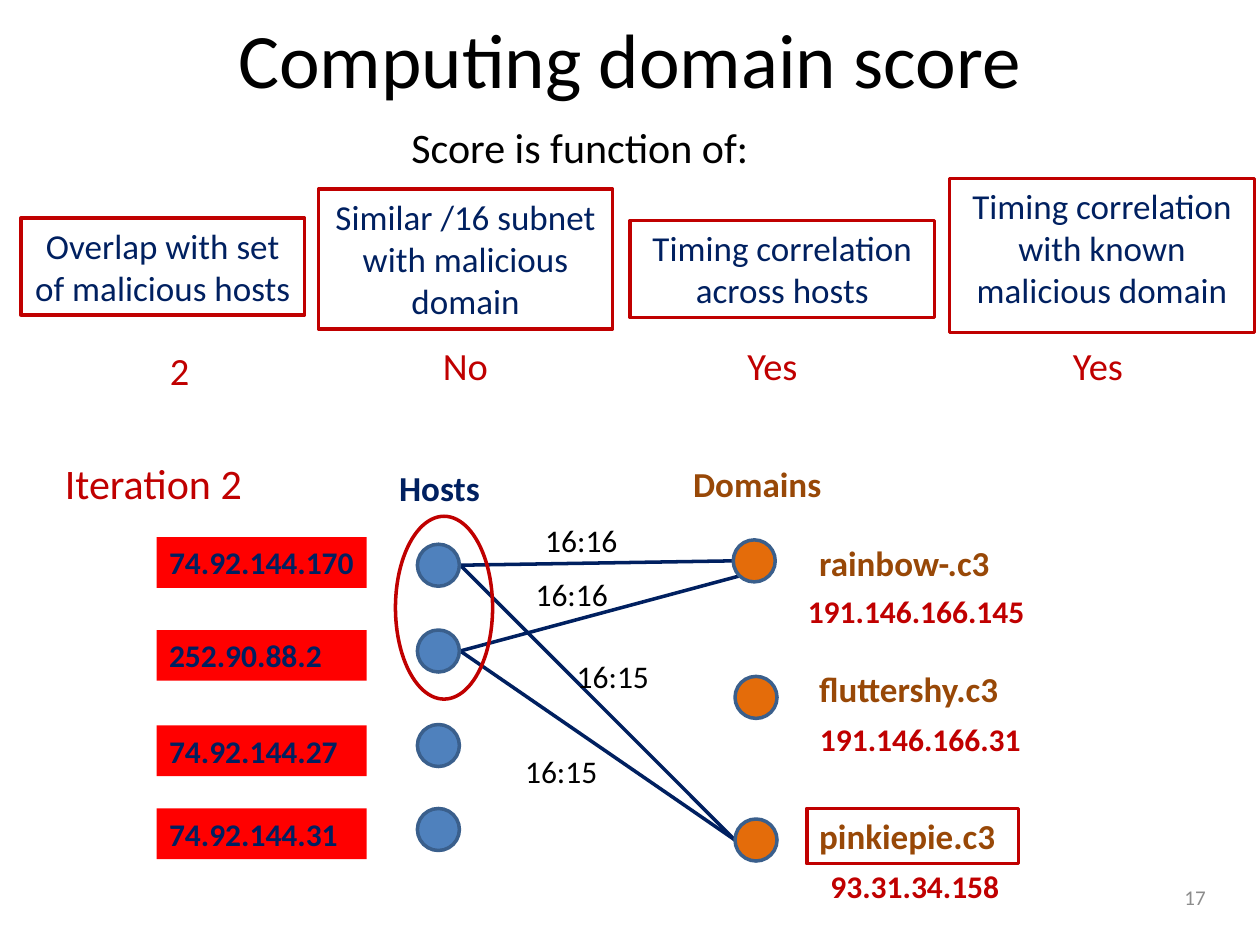
from lxml import etree
from pptx import Presentation
from pptx.dml.color import RGBColor
from pptx.enum.shapes import MSO_CONNECTOR, MSO_SHAPE
from pptx.enum.text import MSO_ANCHOR, PP_ALIGN
from pptx.oxml.ns import qn
from pptx.util import Pt

LEFT, CENTER, RIGHT = PP_ALIGN.LEFT, PP_ALIGN.CENTER, PP_ALIGN.RIGHT
MIDDLE = MSO_ANCHOR.MIDDLE
OVAL = MSO_SHAPE.OVAL
STRAIGHT = MSO_CONNECTOR.STRAIGHT

BLACK, NAVY, RED, BROWN = "000000", "002060", "C00000", "984807"
DOT = 24


def color(value):
    return RGBColor.from_string(value)


def add_text(text, left, top, width, height, size, font_color, bold=False,
             align=LEFT, wrap=True, fill=None, line=None):
    shape = slide.shapes.add_textbox(Pt(left), Pt(top), Pt(width), Pt(height))
    if fill:
        shape.fill.solid()
        shape.fill.fore_color.rgb = color(fill)
    if line:
        shape.line.color.rgb = color(line)
        shape.line.width = Pt(2)
    shape.text_frame.word_wrap = wrap
    paragraph = shape.text_frame.paragraphs[0]
    paragraph.text = text
    paragraph.alignment = align
    paragraph.font.name = "Calibri"
    paragraph.font.size = Pt(size)
    paragraph.font.bold = bold
    paragraph.font.color.rgb = color(font_color)
    return shape


presentation = Presentation()
presentation.slide_width, presentation.slide_height = Pt(720), Pt(540)
slide = presentation.slides.add_slide(presentation.slide_layouts[5])

# Title and subtitle
title = slide.shapes.title
title.left, title.top, title.width, title.height = Pt(36), Pt(-12), Pt(648), Pt(90)
title.text_frame.text = "Computing domain score"
title.text_frame.vertical_anchor = MIDDLE
paragraph = title.text_frame.paragraphs[0]
paragraph.alignment = CENTER
paragraph.font.name = "Calibri"
paragraph.font.size = Pt(44)
paragraph.font.color.rgb = color(BLACK)
add_text("Score is function of:", 228, 66, 258, 36, 24, BLACK)

# Score criteria, each with its value below
criteria = [
    ("Overlap with set of malicious hosts", 12, 124.5, 162, 55.5, "2", 90, 194.5),
    ("Similar /16 subnet with malicious domain", 182, 108, 168, 80, "No", 246, 192),
    ("Timing correlation across hosts", 360, 126, 174, 55.5, "Yes", 420, 192),
    ("Timing correlation with known malicious domain", 542.5, 102, 174.5, 88,
     "Yes", 606, 192),
]
for text, left, top, width, height, value, value_left, value_top in criteria:
    add_text(text, left, top, width, height, 20, NAVY, align=CENTER, line=RED)
    add_text(value, value_left, value_top, 54, 34, 22, RED)

# Headings of the graph
add_text("Iteration 2", 30, 258, 126, 36, 24, RED)
add_text("Hosts", 221, 263, 96, 31.5, 20, NAVY, bold=True)
add_text("Domains", 389, 261, 96, 31.5, 20, BROWN, bold=True)

# Links between hosts and domains, with their times
links = [
    (263, 323, 419, 320.5, "16:16", 304.5, 294),
    (263, 372, 423, 329, "16:16", 299, 325),
    (263, 323, 420, 480, "16:15", 322.5, 372),
    (263, 372, 420, 480, "16:15", 293, 426),
]
for start_x, start_y, end_x, end_y, time, left, top in links:
    link = slide.shapes.add_connector(
        STRAIGHT, Pt(start_x), Pt(start_y), Pt(end_x), Pt(end_y))
    link.line.color.rgb = color(NAVY)
    link.line.width = Pt(2)
    etree.SubElement(link._element.spPr, qn("a:effectLst"))
    add_text(time, left, top, 66, 29, 18, BLACK)

# Host addresses
hosts = [("74.92.144.170", 307), ("252.90.88.2", 360),
         ("74.92.144.27", 414.5), ("74.92.144.31", 462)]
for address, top in hosts:
    add_text(address, 89.5, top, 120, 29, 18, NAVY, bold=True, fill="FF0000")

# Domain names and their addresses
domains = [
    ("rainbow-.c3", 306, 114, None, "191.146.166.145", 454.5, 335, 139.5),
    ("fluttershy.c3", 378, 118, None, "191.146.166.31", 461.5, 408, 129.5),
    ("pinkiepie.c3", 462, 121, RED, "93.31.34.158", 467.5, 492, 111),
]
for name, top, width, line, address, left, address_top, address_width in domains:
    add_text(name, 461, top, width, 31.5, 20, BROWN, bold=True, wrap=False, line=line)
    add_text(address, left, address_top, address_width, 29, 18, RED, bold=True,
             wrap=False)

# Graph nodes
host_dots = [(238.5, top, "4F81BD") for top in (311, 360, 414, 462)]
domain_dots = [(left, top, "E46C0A")
               for left, top in ((419, 308.5), (420, 386.5), (420, 468))]
for left, top, fill in host_dots + domain_dots:
    dot = slide.shapes.add_shape(OVAL, Pt(left), Pt(top), Pt(DOT), Pt(DOT))
    dot.shadow.inherit = False
    dot.fill.solid()
    dot.fill.fore_color.rgb = color(fill)
    dot.line.color.rgb = color("3A5F8C")
    dot.line.width = Pt(2)

# Ring around the malicious hosts
ring = slide.shapes.add_shape(OVAL, Pt(226), Pt(295), Pt(55.5), Pt(104.5))
ring.shadow.inherit = False
ring.fill.background()
ring.line.color.rgb = color(RED)
ring.line.width = Pt(2)

# Slide number
number = add_text("17", 528, 498.5, 168, 28.5, 12, "8C8C8C", align=RIGHT)
number.text_frame.vertical_anchor = MIDDLE

presentation.save("out.pptx")
